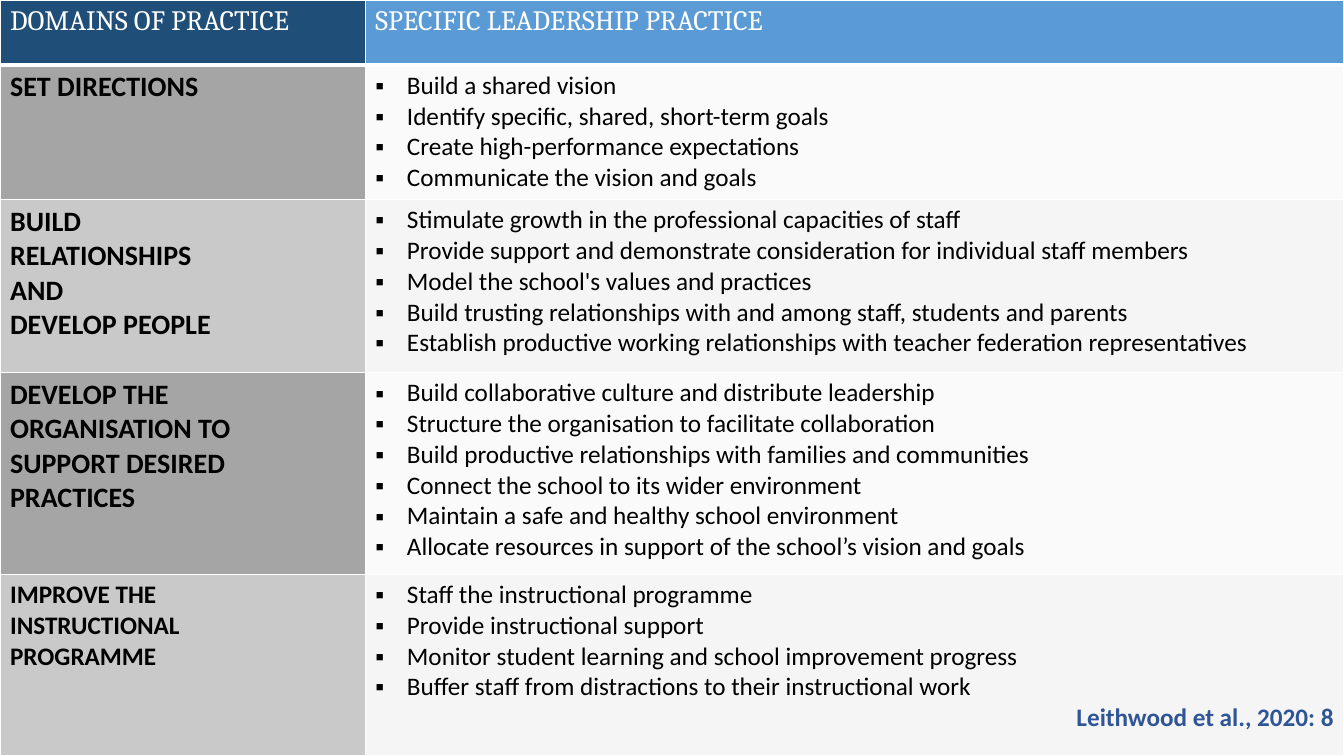
from lxml.etree import SubElement
from pptx import Presentation
from pptx.dml.color import RGBColor
from pptx.enum.text import PP_ALIGN
from pptx.oxml.ns import qn
from pptx.util import Pt

WHITE = RGBColor(0xFF, 0xFF, 0xFF)
BLACK = RGBColor(0, 0, 0)
NAVY = RGBColor(0x1F, 0x4E, 0x79)
BLUE = RGBColor(0x5B, 0x9B, 0xD5)
CITATION_BLUE = RGBColor(0x2F, 0x55, 0x97)
DOMAIN_FILLS = (RGBColor(0xA5, 0xA5, 0xA5), RGBColor(0xC9, 0xC9, 0xC9))
PRACTICE_FILLS = (RGBColor(0xFA, 0xFA, 0xFA), RGBColor(0xF5, 0xF5, 0xF5))

SLIDE_WIDTH, SLIDE_HEIGHT = Pt(960), Pt(540)
COLUMN_WIDTHS = (261, 699)
ROW_HEIGHTS = (46.6, 96.1, 123.7, 144, 129.6)
BULLET_INDENT = Pt(22.5)

HEADINGS = (("DOMAINS OF PRACTICE", NAVY), ("SPECIFIC LEADERSHIP PRACTICE", BLUE))
CITATION = "Leithwood et al., 2020: 8"
# Each domain: heading lines, heading size, practices
DOMAINS = (
    (("SET DIRECTIONS",), 20, (
        "Build a shared vision",
        "Identify specific, shared, short-term goals",
        "Create high-performance expectations",
        "Communicate the vision and goals",
    )),
    (("BUILD", "RELATIONSHIPS", "AND", "DEVELOP PEOPLE"), 20, (
        "Stimulate growth in the professional capacities of staff",
        "Provide support and demonstrate consideration for individual staff members",
        "Model the school's values and practices",
        "Build trusting relationships with and among staff, students and parents",
        "Establish productive working relationships with teacher federation representatives",
    )),
    (("DEVELOP THE", "ORGANISATION TO", "SUPPORT DESIRED", "PRACTICES"), 20, (
        "Build collaborative culture and distribute leadership",
        "Structure the organisation to facilitate collaboration",
        "Build productive relationships with families and communities",
        "Connect the school to its wider environment",
        "Maintain a safe and healthy school environment",
        "Allocate resources in support of the school’s vision and goals",
    )),
    (("IMPROVE THE", "INSTRUCTIONAL", "PROGRAMME"), 18, (
        "Staff the instructional programme",
        "Provide instructional support",
        "Monitor student learning and school improvement progress",
        "Buffer staff from distractions to their instructional work",
    )),
)


def style_cell(cell, fill, top=1, bottom=1):
    """Give the cell white borders and a solid fill; borders must precede the fill in XML."""
    properties = cell._tc.get_or_add_tcPr()
    for side, width in (("L", 1), ("R", 1), ("T", top), ("B", bottom)):
        border = SubElement(properties, qn(f"a:ln{side}"), w=str(Pt(width)))
        SubElement(SubElement(border, qn("a:solidFill")), qn("a:srgbClr"), val=str(WHITE))
    cell.fill.solid()
    cell.fill.fore_color.rgb = fill


def add_line(cell, text, size, color=BLACK, bold=False, font="Calibri"):
    """Add a paragraph, using the cell's empty first one when it is free."""
    frame = cell.text_frame
    line = frame.paragraphs[0] if not frame.text else frame.add_paragraph()
    run = line.add_run()
    run.text = text
    run.font.name = font
    run.font.size = Pt(size)
    run.font.bold = bold
    run.font.color.rgb = color
    return line


def add_bullet(line):
    properties = line._p.get_or_add_pPr()
    properties.set("marL", str(BULLET_INDENT))
    properties.set("indent", str(-BULLET_INDENT))
    SubElement(properties, qn("a:buFont"), typeface="Arial")
    SubElement(properties, qn("a:buChar"), char="▪")


def add_practice_table(slide):
    table = slide.shapes.add_table(
        len(ROW_HEIGHTS), len(COLUMN_WIDTHS), Pt(0), Pt(0), SLIDE_WIDTH, SLIDE_HEIGHT
    ).table
    for column, width in zip(table.columns, COLUMN_WIDTHS):
        column.width = Pt(width)
    for row, height in zip(table.rows, ROW_HEIGHTS):
        row.height = Pt(height)
    return table


def fill_header(table):
    for column, (heading, fill) in enumerate(HEADINGS):
        cell = table.cell(0, column)
        style_cell(cell, fill, bottom=3)
        add_line(cell, heading, 20, WHITE, font="Cambria")


def fill_domain(table, row, heading_lines, heading_size, practices):
    domain_cell, practice_cell = table.cell(row, 0), table.cell(row, 1)
    shade = (row - 1) % 2
    top = 3 if row == 1 else 1
    style_cell(domain_cell, DOMAIN_FILLS[shade], top)
    style_cell(practice_cell, PRACTICE_FILLS[shade], top)
    for heading in heading_lines:
        add_line(domain_cell, heading, heading_size, bold=True)
    for practice in practices:
        add_bullet(add_line(practice_cell, practice, 18))


def main():
    presentation = Presentation()
    presentation.slide_width, presentation.slide_height = SLIDE_WIDTH, SLIDE_HEIGHT
    slide = presentation.slides.add_slide(presentation.slide_layouts[6])
    table = add_practice_table(slide)
    fill_header(table)
    for row, domain in enumerate(DOMAINS, start=1):
        fill_domain(table, row, *domain)
    citation = add_line(table.cell(len(DOMAINS), 1), CITATION, 18, CITATION_BLUE, bold=True)
    citation.alignment = PP_ALIGN.RIGHT
    presentation.save("out.pptx")


if __name__ == "__main__":
    main()
